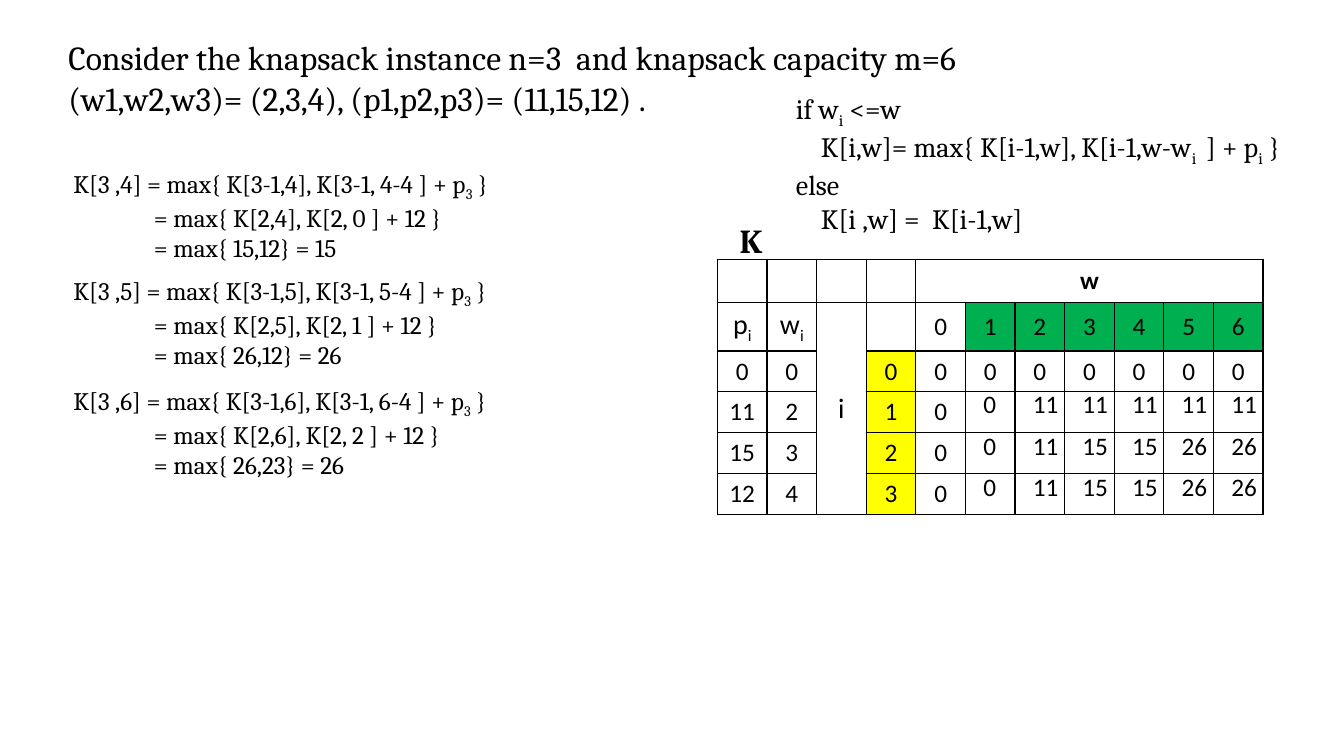
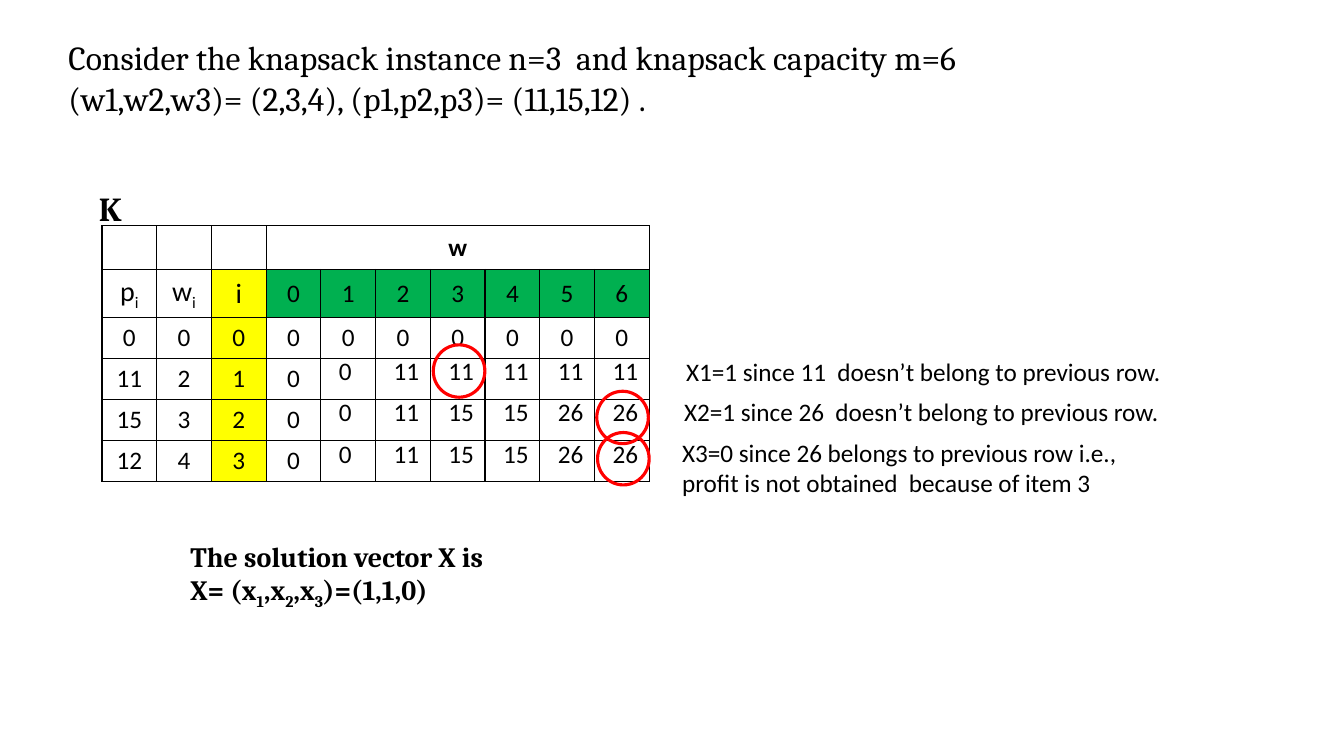
from lxml import etree
from pptx import Presentation
from pptx.dml.color import RGBColor
from pptx.enum.shapes import MSO_SHAPE
from pptx.enum.text import MSO_ANCHOR, MSO_AUTO_SIZE, PP_ALIGN
from pptx.oxml.ns import qn
from pptx.util import Cm, Pt

BLACK = RGBColor(0x00, 0x00, 0x00)
GREEN = RGBColor(0x00, 0xB0, 0x50)
YELLOW = RGBColor(0xFF, 0xFF, 0x00)
RED = RGBColor(0xFF, 0x00, 0x00)
SERIF, SANS = "Cambria", "Calibri"
CENTER, LEFT = PP_ALIGN.CENTER, PP_ALIGN.LEFT
TOP, MIDDLE = MSO_ANCHOR.TOP, MSO_ANCHOR.MIDDLE
NO_AUTOFIT = MSO_AUTO_SIZE.NONE
OVAL = MSO_SHAPE.OVAL
TITLE_ONLY = 5

TITLE = [
    "Consider the knapsack instance n=3  and knapsack capacity m=6",
    "(w1,w2,w3)= (2,3,4), (p1,p2,p3)= (11,15,12) .",
]
ROW_HEIGHTS = [1.1, 1.21] + [1.03] * 4
CAPACITIES = [str(capacity) for capacity in range(7)]
ITEMS = [("0", "0"), ("11", "2"), ("15", "3"), ("12", "4")]
BEST_PROFITS = [
    [0, 11, 11, 11, 11, 11],
    [0, 11, 15, 15, 26, 26],
    [0, 11, 15, 15, 26, 26],
]
STEPS = [
    (4.11, ["K[3 ,4] = max{ K[3-1,4], K[3-1, 4-4 ] + p|3| }",
            "= max{ K[2,4], K[2, 0 ] + 12 }", "= max{ 15,12} = 15"]),
    (6.81, ["K[3 ,5] = max{ K[3-1,5], K[3-1, 5-4 ] + p|3| }",
            "= max{ K[2,5], K[2, 1 ] + 12 }", "= max{ 26,12} = 26"]),
    (9.58, ["K[3 ,6] = max{ K[3-1,6], K[3-1, 6-4 ] + p|3| }",
            "= max{ K[2,6], K[2, 2 ] + 12 }", "= max{ 26,23} = 26"]),
]
RECURRENCE = ["if w|i| <=w", "K[i,w]= max{ K[i-1,w], K[i-1,w-w|i | ] + p|i| }",
              "else", "K[i ,w] =  K[i-1,w]"]
NOTES = [
    (17.04, 8.86, ["X1=1 since 11  doesn’t belong to previous row."]),
    (16.99, 9.86, ["X2=1 since 26  doesn’t belong to previous row."]),
    (16.94, 10.9, ["X3=0 since 26 belongs to previous row i.e.,",
                   "profit is not obtained  because of item 3"]),
]
CIRCLES = [(10.92, 8.69), (15.04, 9.86), (15.06, 10.9)]


def write_paragraph(paragraph, text, size, font, bold=False, align=LEFT):
    """Write text in which every second part between bars is a subscript."""
    paragraph.alignment = align
    paragraph.font.name = font
    paragraph.font.size = Pt(size)
    paragraph.font.bold = bold
    paragraph.font.color.rgb = BLACK
    for index, part in enumerate(text.split("|")):
        if not part:
            continue
        run = paragraph.add_run()
        run.text = part
        if index % 2:
            run.font._element.set("baseline", "-25000")


def write_lines(frame, lines, size, font, bold=False, indents=()):
    frame.word_wrap = True
    for index, line in enumerate(lines):
        paragraph = frame.add_paragraph() if index else frame.paragraphs[0]
        write_paragraph(paragraph, line, size, font, bold)
        if index < len(indents):
            paragraph._p.get_or_add_pPr().set("marL", str(Cm(indents[index])))


def add_text(slide, left, top, width, height, lines, size=18, font=SANS, **style):
    box = slide.shapes.add_textbox(Cm(left), Cm(top), Cm(width), Cm(height))
    write_lines(box.text_frame, lines, size, font, **style)


def add_titled_slide(presentation):
    slide = presentation.slides.add_slide(presentation.slide_layouts[TITLE_ONLY])
    title = slide.shapes.title
    title.left, title.top, title.width, title.height = Cm(1.47), Cm(0.81), Cm(27.1), Cm(2.31)
    title.text_frame.vertical_anchor = TOP
    title.text_frame.auto_size = NO_AUTOFIT
    write_lines(title.text_frame, TITLE, 24, SERIF)
    return slide


def set_borders(cell):
    properties = cell._tc.get_or_add_tcPr()
    for side in ("a:lnL", "a:lnR", "a:lnT", "a:lnB"):
        line = etree.SubElement(properties, qn(side), w=str(Pt(1)))
        fill = etree.SubElement(line, qn("a:solidFill"))
        etree.SubElement(fill, qn("a:srgbClr"), val=str(BLACK))


def format_cell(cell, text, size, bold, fill):
    set_borders(cell)
    if fill is None:
        cell.fill.background()
    else:
        cell.fill.solid()
        cell.fill.fore_color.rgb = fill
    cell.vertical_anchor = MIDDLE
    write_paragraph(cell.text_frame.paragraphs[0], text, size, SANS, bold, CENTER)


def add_profit_table(slide, left, top, column_width, rows, green_start, yellow_start):
    """Draw the table; return it with green and yellow from the given column and row."""
    columns = len(rows[0])
    index_column = columns - 8
    frame = slide.shapes.add_table(len(rows), columns, Cm(left), Cm(top),
                                   Cm(column_width * columns), Cm(sum(ROW_HEIGHTS)))
    table = frame.table
    table.first_row = table.horz_banding = False
    for column in table.columns:
        column.width = Cm(column_width)
    for row, height in zip(table.rows, ROW_HEIGHTS):
        row.height = Cm(height)
    for row, texts in enumerate(rows):
        for column, text in enumerate(texts):
            fill = None
            if row == 1 and column >= green_start:
                fill = GREEN
            elif row >= yellow_start and column == index_column:
                fill = YELLOW
            size = 20 if row == 1 and column < 3 else 18
            format_cell(table.cell(row, column), text, size, row == 0, fill)
    table.cell(0, columns - 7).merge(table.cell(0, columns - 1))
    return table


def add_profits(slide, table_left, table_top, column_width, first_column):
    """Set the best profits over the open cells of the table."""
    for row, profits in enumerate(BEST_PROFITS):
        for column, profit in enumerate(profits, first_column):
            add_text(slide, table_left + 0.2 + column * column_width,
                     table_top + 3.13 + row * 1.05, 1.2, 1.03, [str(profit)])


def table_rows(spacer):
    """Build the table texts, with spacer columns between w and the row index."""
    lead = len(spacer)
    header = [""] * (3 + lead) + ["w"] + [""] * 6
    symbols = ["p|i|", "w|i|", "i"] + spacer + CAPACITIES
    items = []
    for index, (profit, weight) in enumerate(ITEMS):
        values = ["0"] * 7 if index == 0 else ["0"] + [""] * 6
        items.append([profit, weight] + [""] * lead + [str(index)] + values)
    return [header, symbols] + items


def add_circle(slide, left, top):
    circle = slide.shapes.add_shape(OVAL, Cm(left), Cm(top), Cm(1.3), Cm(1.32))
    circle.shadow.inherit = False
    circle.fill.background()
    circle.line.color.rgb = RED
    circle.line.width = Pt(2.25)


def build_last_row_slide(presentation):
    slide = add_titled_slide(presentation)
    left, top, column_width = 18.08, 6.53, 1.25
    table = add_profit_table(slide, left, top, column_width, table_rows([""]), 5, 2)
    table.cell(1, 2).merge(table.cell(5, 2))
    add_profits(slide, left, top, column_width, 5)
    add_text(slide, 18.39, 5.41, 0.99, 1.27, ["K"], 24, SERIF, bold=True)
    for step_top, lines in STEPS:
        add_text(slide, 1.6, step_top, 16.3, 2.6, lines, 18, SERIF, indents=(0, 2.03, 2.03))
    add_text(slide, 19.81, 2.18, 13.8, 3.68, RECURRENCE, 20, SERIF,
             indents=(0, 0.63, 0, 0.63))


def build_solution_slide(presentation):
    slide = add_titled_slide(presentation)
    left, top, column_width = 2.57, 5.69, 1.38
    add_profit_table(slide, left, top, column_width, table_rows([]), 3, 1)
    add_profits(slide, left, top, column_width, 4)
    add_text(slide, 2.24, 4.62, 0.99, 1.27, ["K"], 24, SERIF, bold=True)
    for position in CIRCLES:
        add_circle(slide, *position)
    for note_left, note_top, lines in NOTES:
        add_text(slide, note_left, note_top, 16, 1.03 * len(lines), lines)
    add_text(slide, 4.55, 13.46, 18.52, 1.96,
             ["The solution vector X is", "X= (x|1|,x|2|,x|3|)=(1,1,0)"],
             20, SERIF, bold=True)


def main():
    presentation = Presentation()
    presentation.slide_width, presentation.slide_height = Cm(33.87), Cm(19.05)
    build_last_row_slide(presentation)
    build_solution_slide(presentation)
    presentation.save("out.pptx")


if __name__ == "__main__":
    main()
